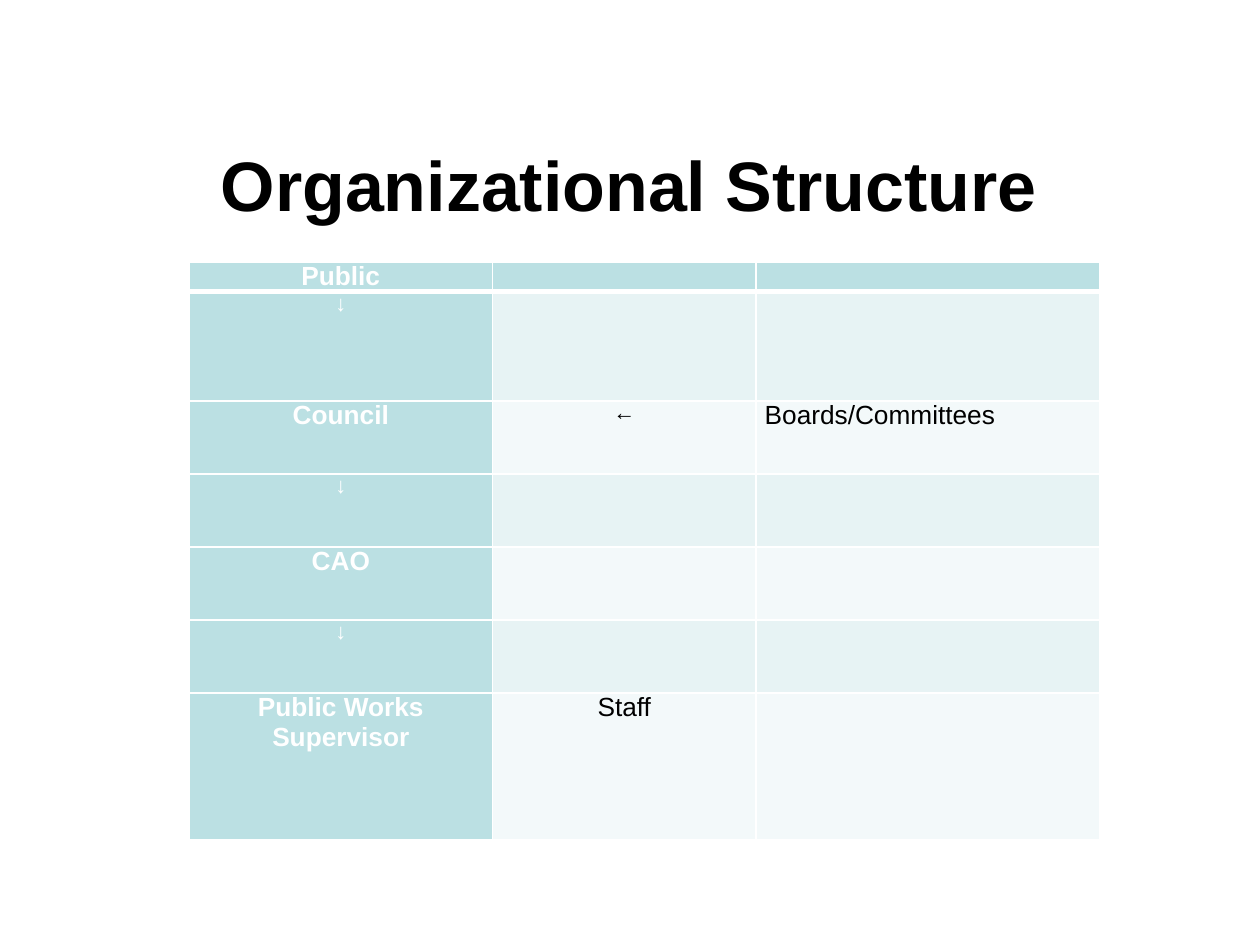
from pptx import Presentation
from pptx.dml.color import RGBColor
from pptx.enum.text import MSO_ANCHOR, PP_ALIGN
from pptx.oxml.xmlchemy import OxmlElement
from pptx.util import Inches, Pt

CENTER, LEFT = PP_ALIGN.CENTER, PP_ALIGN.LEFT
MIDDLE = MSO_ANCHOR.MIDDLE
FONT = "Arial"
BLACK = RGBColor(0x00, 0x00, 0x00)
WHITE = RGBColor(0xFF, 0xFF, 0xFF)
TEAL = RGBColor(0xBB, 0xE0, 0xE3)
BANDS = (RGBColor(0xF3, 0xF9, 0xFA), RGBColor(0xE7, 0xF3, 0xF4))
TITLE_BOX = (0.49, 0.83, 9, 1.25)
TABLE_BOX = (1.5, 2.08, 7.23, 4.61)
COL_WIDTHS = (2.41, 2.09, 2.73)
ROW_HEIGHTS = (0.23, 0.87, 0.58, 0.58, 0.58, 0.58, 1.16)
ARROWS = "↓←"
ROWS = (
    ("Public", "", ""),
    ("↓", "", ""),
    ("Council", "←", "Boards/Committees"),
    ("↓", "", ""),
    ("CAO", "", ""),
    ("↓", "", ""),
    ("Public Works Supervisor", "Staff", ""),
)


def add_text(p, text, size, color, bold, align):
    """Add one formatted run to a paragraph."""
    p.alignment = align
    r = p.add_run()
    r.text = text
    r.font.name, r.font.size, r.font.bold = FONT, Pt(size), bold
    r.font.color.rgb = color


def add_title(s, box):
    """Place the slide title in the given box."""
    sp = s.shapes.title
    sp.left, sp.top, sp.width, sp.height = map(Inches, box)
    tf = sp.text_frame
    tf.word_wrap, tf.vertical_anchor = True, MIDDLE
    add_text(tf.paragraphs[0], "Organizational Structure", 40, BLACK, True, CENTER)


def set_borders(cell, bottom, top):
    """Draw white lines on the four sides of a cell."""
    tc_pr = cell._tc.get_or_add_tcPr()
    sides = (("L", 1), ("R", 1), ("T", top), ("B", bottom))
    for i, (side, width) in enumerate(sides):
        ln = OxmlElement(f"a:ln{side}")
        ln.set("w", str(Pt(width)))
        fill = OxmlElement("a:solidFill")
        color = OxmlElement("a:srgbClr")
        color.set("val", str(WHITE))
        fill.append(color)
        ln.append(fill)
        tc_pr.insert(i, ln)


def fill_cell(cell, text, row, col):
    """Format one cell by its place in the table and write its text."""
    head = row == 0 or col == 0
    cell.margin_left = cell.margin_right = Inches(0.07)
    cell.margin_top = cell.margin_bottom = 0
    cell.fill.solid()
    cell.fill.fore_color.rgb = TEAL if head else BANDS[row % 2]
    set_borders(cell, 3 if row == 0 else 1, 3 if row == 1 else 1)
    p = cell.text_frame.paragraphs[0]
    if text:
        size = 12.5 if text in ARROWS else 15
        add_text(p, text, size, WHITE if head else BLACK, head, LEFT if col == 2 else CENTER)
    else:
        end = OxmlElement("a:endParaRPr")
        end.set("sz", "1200")
        p._p.append(end)


def add_structure_table(s, box):
    """Place the organization table in the given box."""
    table = s.shapes.add_table(len(ROWS), len(COL_WIDTHS), *map(Inches, box)).table
    for column, width in zip(table.columns, COL_WIDTHS):
        column.width = Inches(width)
    for i, (texts, height) in enumerate(zip(ROWS, ROW_HEIGHTS)):
        table.rows[i].height = Inches(height)
        for j, text in enumerate(texts):
            fill_cell(table.cell(i, j), text, i, j)


def main():
    """Build and save the slide."""
    prs = Presentation()
    prs.slide_width, prs.slide_height = Inches(10), Inches(7.5)
    s = prs.slides.add_slide(prs.slide_layouts.get_by_name("Title Only"))
    add_title(s, TITLE_BOX)
    add_structure_table(s, TABLE_BOX)
    prs.save("out.pptx")


if __name__ == "__main__":
    main()
